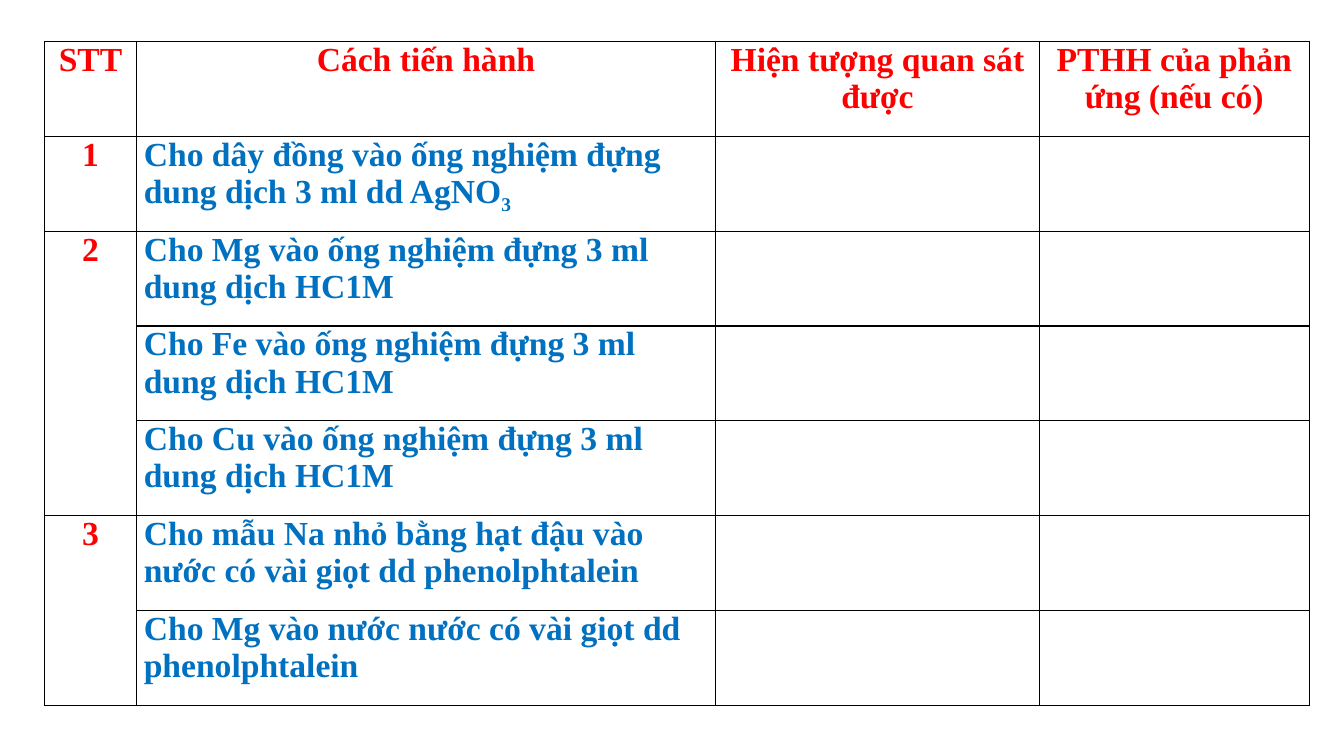
from lxml.etree import SubElement
from pptx import Presentation
from pptx.dml.color import RGBColor
from pptx.enum.text import PP_ALIGN
from pptx.oxml.ns import qn
from pptx.util import Emu, Pt

PX = 914400 / 192
RED = RGBColor(0xFF, 0x00, 0x00)
BLUE = RGBColor(0x00, 0x70, 0xC0)
BLACK = RGBColor(0x00, 0x00, 0x00)
WHITE = RGBColor(0xFF, 0xFF, 0xFF)
FONT = "Times New Roman"

COLUMNS = (175, 1103, 617, 514)
HEADERS = ("STT", "Cách tiến hành", "Hiện tượng quan sát được", "PTHH của phản ứng (nếu có)")
EXPERIMENTS = (
    ("1", [("Cho dây đồng vào ống nghiệm đựng dung dịch 3 ml dd AgNO", "3")]),
    ("2", [(f"Cho {metal} vào ống nghiệm đựng 3 ml dung dịch HC1M", "")
           for metal in ("Mg", "Fe", "Cu")]),
    ("3", [("Cho mẫu Na nhỏ bằng hạt đậu vào nước có vài giọt dd phenolphtalein", ""),
           ("Cho Mg vào nước nước có vài giọt dd phenolphtalein", "")]),
)


def px(n):
    """Turn pixels into EMU."""
    return Emu(round(n * PX))


def write(cell, text, subscript="", color=RED, align=PP_ALIGN.CENTER, size=24):
    """Put bold text, with an optional subscript, into a cell."""
    p = cell.text_frame.paragraphs[0]
    p.alignment = align
    p.space_after = Pt(6)
    for part, baseline in ((text, 0), (subscript, -25000)):
        if part:
            r = p.add_run()
            r.text = part
            r.font.name, r.font.size, r.font.bold = FONT, Pt(size), True
            r.font.color.rgb = color
            if baseline:
                r._r.get_or_add_rPr().set("baseline", str(baseline))


def format_cell(cell):
    """Give a cell its margins, black borders and white fill."""
    cell.margin_left = cell.margin_right = px(14)
    cell.margin_top = cell.margin_bottom = 0
    tcPr = cell._tc.get_or_add_tcPr()
    for side in ("lnL", "lnR", "lnT", "lnB"):
        ln = SubElement(tcPr, qn(f"a:{side}"), w=str(Pt(1)))
        SubElement(SubElement(ln, qn("a:solidFill")), qn("a:srgbClr"), val=str(BLACK))
    cell.fill.solid()
    cell.fill.fore_color.rgb = WHITE


def add_experiment_table(s, x, y, w, h):
    """Draw the table of experiments in the given box."""
    count = 1 + sum(len(steps) for _, steps in EXPERIMENTS)
    table = s.shapes.add_table(count, len(COLUMNS), px(x), px(y), px(w), px(h)).table
    table.first_row = table.horz_banding = False
    for column, width in zip(table.columns, COLUMNS):
        column.width = px(w * width / sum(COLUMNS))
    for row in table.rows:
        row.height = px(h / count)
    for cell in table.iter_cells():
        format_cell(cell)
    for i, header in enumerate(HEADERS):
        write(table.cell(0, i), header)
    top = 1
    for number, steps in EXPERIMENTS:
        if len(steps) > 1:
            table.cell(top, 0).merge(table.cell(top + len(steps) - 1, 0))
        write(table.cell(top, 0), number)
        for i, (text, subscript) in enumerate(steps, top):
            write(table.cell(i, 1), text, subscript, color=BLUE, align=PP_ALIGN.LEFT)
        top += len(steps)


def main():
    """Build and save the slide."""
    prs = Presentation()
    prs.slide_width, prs.slide_height = px(2560), px(1440)
    s = prs.slides.add_slide(prs.slide_layouts[6])
    add_experiment_table(s, 85, 79, 2409, 1265)
    prs.save("out.pptx")


if __name__ == "__main__":
    main()
